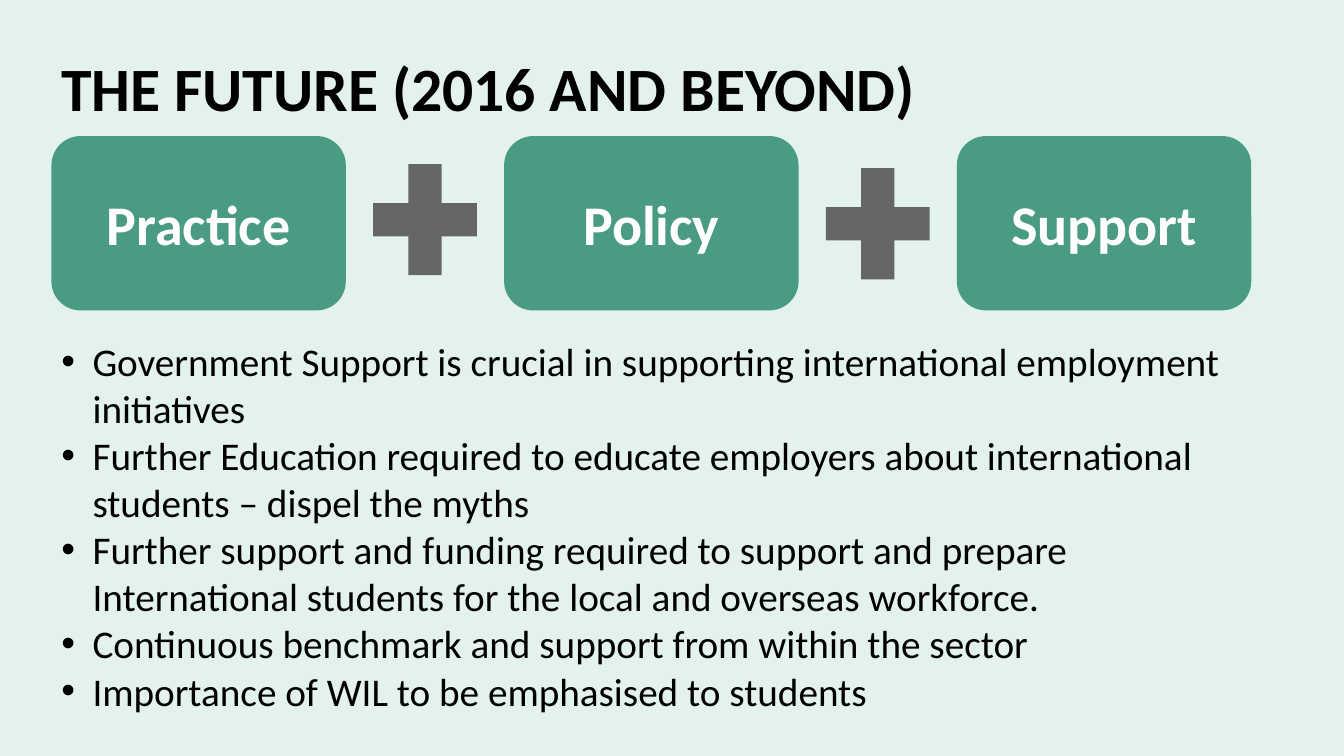
from lxml import etree
from pptx import Presentation
from pptx.dml.color import RGBColor
from pptx.enum import shapes, text
from pptx.oxml.ns import qn
from pptx.util import Inches, Pt

MINT = RGBColor(0xE3, 0xF2, 0xED)
GREEN = RGBColor(0x4A, 0x9B, 0x83)
GRAY = RGBColor(0x66, 0x66, 0x66)
BLACK = RGBColor(0, 0, 0)
WHITE = RGBColor(0xFF, 0xFF, 0xFF)
FONT = "Calibri"

PILLARS = ["Practice", "Policy", "Support"]
PLUS_OFFSETS = [0.08, 0.12]
ACTIONS = [
    "Government Support is crucial in supporting international employment initiatives",
    "Further Education required to educate employers about international students – dispel the myths",
    "Further support and funding required to support and prepare International students "
    "for the local and overseas workforce.",
    "Continuous benchmark and support from within the sector",
    "Importance of WIL to be emphasised to students",
]


def add_run(paragraph, content, size, color, bold=False):
    run = paragraph.add_run()
    run.text = content
    run.font.name = FONT
    run.font.size = Pt(size)
    run.font.bold = bold
    run.font.color.rgb = color


def add_text_frame(slide, left, top, width, height):
    box = slide.shapes.add_textbox(Inches(left), Inches(top), Inches(width), Inches(height))
    frame = box.text_frame
    frame.word_wrap = True
    frame.vertical_anchor = text.MSO_ANCHOR.MIDDLE
    return frame


def add_filled_shape(slide, kind, left, top, width, height, color):
    shape = slide.shapes.add_shape(kind, Inches(left), Inches(top), Inches(width), Inches(height))
    shape.shadow.inherit = False
    shape.fill.solid()
    shape.fill.fore_color.rgb = color
    shape.line.fill.background()
    return shape


def add_title(slide, left, top, width, height):
    frame = add_text_frame(slide, left, top, width, height)
    add_run(frame.paragraphs[0], "THE FUTURE (2016 AND BEYOND)", 44, BLACK, bold=True)


def add_pillars(slide, left, top, width, height):
    card_width, plus_width, plus_height = 2.92, 1.4, 1.5
    pitch = (width - card_width) / (len(PILLARS) - 1)
    for index, label in enumerate(PILLARS):
        card = add_filled_shape(slide, shapes.MSO_SHAPE.ROUNDED_RECTANGLE,
                                left + index * pitch, top, card_width, height, GREEN)
        card.text_frame.vertical_anchor = text.MSO_ANCHOR.MIDDLE
        paragraph = card.text_frame.paragraphs[0]
        paragraph.alignment = text.PP_ALIGN.CENTER
        add_run(paragraph, label, 40, WHITE, bold=True)
    plus_inset = card_width + (pitch - card_width - plus_width) / 2
    for index, offset in enumerate(PLUS_OFFSETS):
        add_filled_shape(slide, shapes.MSO_SHAPE.MATH_PLUS, left + index * pitch + plus_inset,
                         top + offset, plus_width, plus_height, GRAY)


def add_actions(slide, left, top, width, height):
    frame = add_text_frame(slide, left, top, width, height)
    frame.auto_size = text.MSO_AUTO_SIZE.SHAPE_TO_FIT_TEXT
    for index, action in enumerate(ACTIONS):
        paragraph = frame.add_paragraph() if index else frame.paragraphs[0]
        properties = paragraph._p.get_or_add_pPr()
        properties.set("marL", str(Inches(0.31)))
        properties.set("indent", str(-Inches(0.31)))
        etree.SubElement(properties, qn("a:buFont")).set("typeface", "Arial")
        etree.SubElement(properties, qn("a:buChar")).set("char", "•")
        add_run(paragraph, action, 28, BLACK)


def main():
    presentation = Presentation()
    presentation.slide_width = Inches(13.33)
    presentation.slide_height = Inches(7.5)
    slide = presentation.slides.add_slide(presentation.slide_layouts[6])
    slide.background.fill.solid()
    slide.background.fill.fore_color.rgb = MINT
    add_title(slide, 0.51, 0.37, 8.98, 0.98)
    add_pillars(slide, 0.51, 1.35, 11.9, 1.73)
    add_actions(slide, 0.51, 3.28, 11.9, 3.87)
    presentation.save("out.pptx")


if __name__ == "__main__":
    main()
